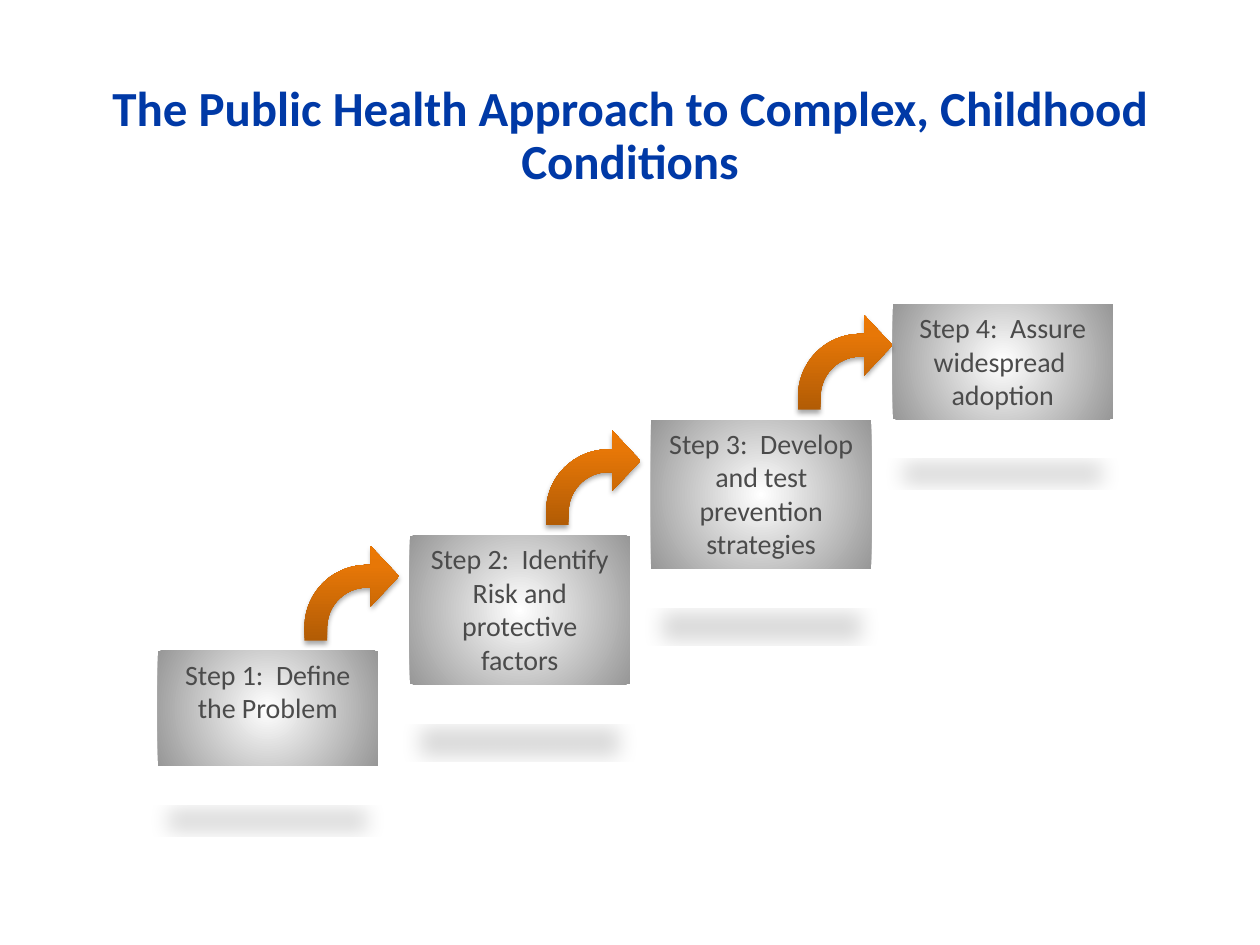
from lxml.etree import SubElement
from pptx import Presentation
from pptx.dml.color import RGBColor
from pptx.enum.shapes import MSO_SHAPE
from pptx.enum.text import MSO_ANCHOR, MSO_AUTO_SIZE, PP_ALIGN
from pptx.oxml import parse_xml
from pptx.oxml.ns import nsdecls, qn
from pptx.util import Pt

COLORS = {
    "title": "0039A6", "text": "4B4B4B", "box_center": "FFFFFF", "box_edge": "979797",
    "arrow_dark": "B25C05", "arrow_mid": "E77707", "arrow_light": "ED7803", "shadow": "000000",
}
FONT = "Calibri"
RISE = 66  # each step sits this much higher than the one before
FIRST_TOP = 372

# Box left, box height, text
STEPS = [
    (90, 65.5, "Step 1:  Define the Problem"),
    (234, 85, "Step 2:  Identify Risk and protective factors"),
    (372, 85, "Step 3:  Develop and test prevention strategies"),
    (510, 65.5, "Step 4:  Assure widespread  adoption"),
]
ARROW_LEFTS = [174, 312, 456]
BOX_PATH = ('<a:path path="circle"><a:fillToRect l="50000" t="50000" '
            'r="50000" b="50000"/></a:path>')
ARROW_PATH = '<a:lin ang="16200000" scaled="0"/>'


def set_gradient(shape, stops, direction):
    """Give a shape a gradient fill and no outline."""
    stop_xml = "".join(
        f'<a:gs pos="{position * 1000}"><a:srgbClr val="{COLORS[name]}"/></a:gs>'
        for position, name in stops)
    gradient = parse_xml(f'<a:gradFill {nsdecls("a")} rotWithShape="1">'
                         f'<a:gsLst>{stop_xml}</a:gsLst>{direction}</a:gradFill>')
    shape.line.fill.background()
    shape._element.spPr.find(qn("a:prstGeom")).addnext(gradient)


def set_shadow(shape, opacity, blur, distance, **scale):
    """Give a shape a shadow that falls straight down."""
    shape.shadow.inherit = False
    effects = shape._element.spPr.find(qn("a:effectLst"))
    shadow = SubElement(effects, qn("a:outerShdw"), blurRad=str(Pt(blur)),
                        dist=str(Pt(distance)), dir="5400000", **scale, rotWithShape="0")
    color = SubElement(shadow, qn("a:srgbClr"), val=COLORS["shadow"])
    SubElement(color, qn("a:alpha"), val=str(opacity * 1000))


presentation = Presentation()
presentation.slide_width, presentation.slide_height = Pt(720), Pt(540)
slide = presentation.slides.add_slide(presentation.slide_layouts[5])

# Title
title = slide.shapes.title
title.left, title.top, title.width, title.height = Pt(36), Pt(21.6), Pt(648), Pt(90)
title.text_frame.text = "The Public Health Approach to Complex, Childhood Conditions"
title.text_frame.vertical_anchor = MSO_ANCHOR.BOTTOM
title.text_frame.auto_size = MSO_AUTO_SIZE.NONE
paragraph = title.text_frame.paragraphs[0]
paragraph.alignment = PP_ALIGN.CENTER
paragraph.line_spacing = Pt(30)
font = paragraph.runs[0].font
font.name, font.size, font.bold = FONT, Pt(28), True
font.color.rgb = RGBColor.from_string(COLORS["title"])

# Step boxes
for index, (left, height, text) in enumerate(STEPS):
    box = slide.shapes.add_shape(MSO_SHAPE.RECTANGLE, Pt(left), Pt(FIRST_TOP - index * RISE),
                                 Pt(126), Pt(height))
    set_gradient(box, [(0, "box_center"), (100, "box_edge")], BOX_PATH)
    set_shadow(box, 15, 12, 25, sx="90000", sy="-19000")
    box.text_frame.text = text
    box.text_frame.word_wrap = True
    box.text_frame.vertical_anchor = MSO_ANCHOR.TOP
    paragraph = box.text_frame.paragraphs[0]
    paragraph.alignment = PP_ALIGN.CENTER
    font = paragraph.runs[0].font
    font.name, font.size = FONT, Pt(16)
    font.color.rgb = RGBColor.from_string(COLORS["text"])

# Arrows from each step up to the next
for index, left in enumerate(ARROW_LEFTS):
    arrow = slide.shapes.add_shape(MSO_SHAPE.BENT_ARROW, Pt(left),
                                   Pt(FIRST_TOP - 60 - index * RISE), Pt(54), Pt(54))
    for number, value in enumerate([0.24, 0.32, 0.3, 0.66]):
        arrow.adjustments[number] = value
    set_gradient(arrow, [(0, "arrow_dark"), (80, "arrow_mid"), (100, "arrow_light")], ARROW_PATH)
    set_shadow(arrow, 35, 3.1, 1.8)

presentation.save("out.pptx")
